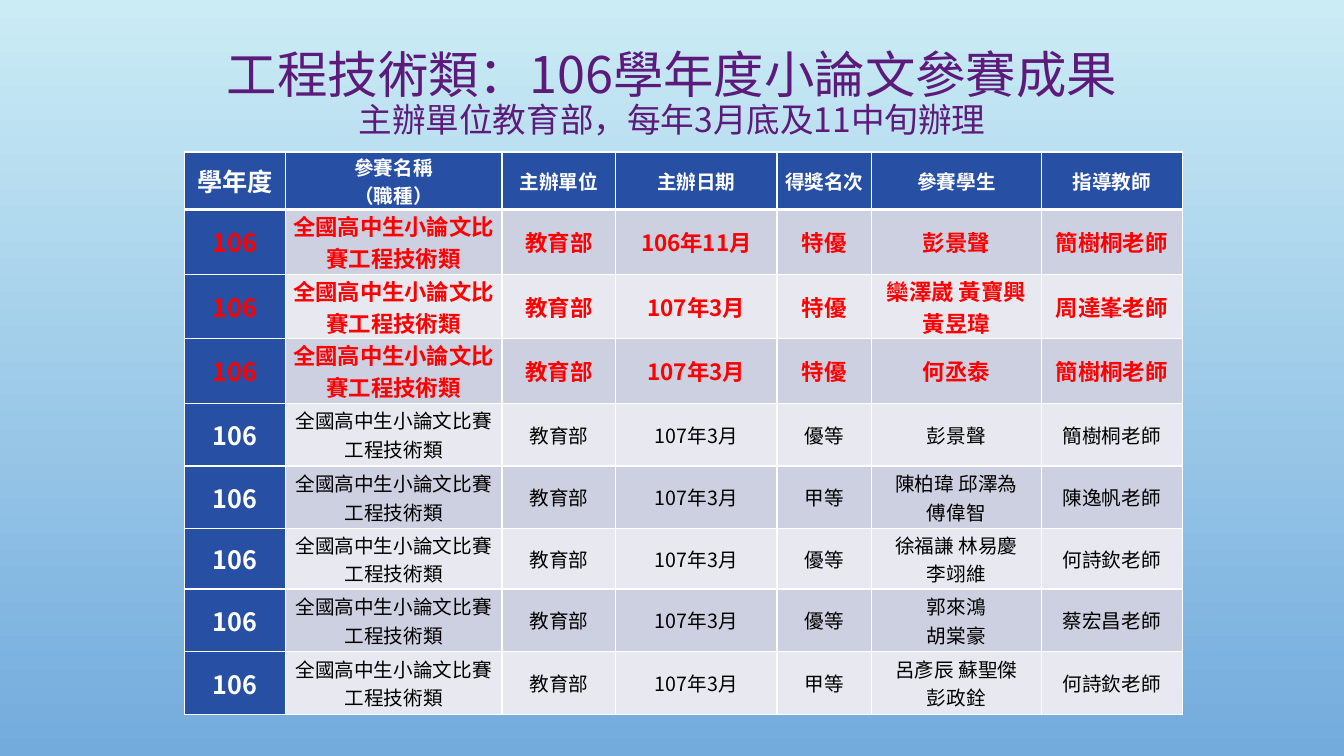
from lxml import etree
from pptx import Presentation
from pptx.dml.color import RGBColor
from pptx.enum import text
from pptx.oxml import ns
from pptx.util import Cm, Pt

FONT = "Noto Sans CJK SC"
BLUE, WHITE, RED, BLACK, PURPLE = "274FA4", "FFFFFF", "FF0000", "000000", "5C1B7B"
BANDS = ["CDD0E0", "E8E9F0"]
HEADERS = ["學年度", "參賽名稱\n（職種）", "主辦單位", "主辦日期", "得獎名次", "參賽學生", "指導教師"]
AWARDS = [
    ("106年11月", "特優", "彭景聲", "簡樹桐老師"),
    ("107年3月", "特優", "欒澤崴 黃寶興\n黃昱瑋", "周達峯老師"),
    ("107年3月", "特優", "何丞泰", "簡樹桐老師"),
    ("107年3月", "優等", "彭景聲", "簡樹桐老師"),
    ("107年3月", "甲等", "陳柏瑋 邱澤為\n傅偉智", "陳逸帆老師"),
    ("107年3月", "優等", "徐福謙 林易慶\n李翊維", "何詩欽老師"),
    ("107年3月", "優等", "郭來鴻\n胡棠豪", "蔡宏昌老師"),
    ("107年3月", "甲等", "呂彥辰 蘇聖傑\n彭政銓", "何詩欽老師"),
]
COLUMN_WIDTHS = [2.54, 5.46, 2.87, 4.06, 2.39, 4.27, 3.56]
ROW_HEIGHTS = [1.45] + [1.58] * 5 + [1.52] + [1.58] * 2


def add_span(para, words, size, color, bold=False):
    span = para.add_run()
    span.text = words
    span.font.size = Pt(size)
    span.font.bold = bold
    span.font.color.rgb = RGBColor.from_string(color)
    span.font.name = FONT
    etree.SubElement(span.font._element, ns.qn("a:ea"), typeface=FONT)


def add_borders(cell, top, bottom):
    """Give the cell white borders; top and bottom are widths in points."""
    widths = {"L": 1, "R": 1, "T": top, "B": bottom}
    for place, (side, width) in enumerate(widths.items()):
        line = etree.Element(ns.qn("a:ln" + side), w=str(Pt(width)))
        fill = etree.SubElement(line, ns.qn("a:solidFill"))
        etree.SubElement(fill, ns.qn("a:srgbClr"), val=WHITE)
        cell._tc.get_or_add_tcPr().insert(place, line)


deck = Presentation()
deck.slide_width, deck.slide_height = Cm(33.87), Cm(19.05)
page = deck.slides.add_slide(deck.slide_layouts[5])

backdrop = page.background.fill
backdrop.gradient()
backdrop.gradient_angle = 270
for stop, color in zip(backdrop.gradient_stops, ["CBECF5", "73ABDD"]):
    stop.color.rgb = RGBColor.from_string(color)

title = page.shapes.title
title.left, title.top, title.width, title.height = Cm(2.54), Cm(0.97), Cm(28.79), Cm(2.84)
title.text_frame.auto_size = text.MSO_AUTO_SIZE.NONE
title.text_frame.word_wrap = True
title.text_frame.vertical_anchor = text.MSO_ANCHOR.MIDDLE
para = title.text_frame.paragraphs[0]
para.alignment = text.PP_ALIGN.CENTER
para.line_spacing = 0.9
add_span(para, "工程技術類：106學年度小論文參賽成果", 36, PURPLE)
para.add_line_break()
etree.SubElement(para._p[-1], ns.qn("a:rPr"), sz="3600")
add_span(para, "主辦單位教育部，每年3月底及11中旬辦理", 24, PURPLE)

rows = [HEADERS]
for number, award in enumerate(AWARDS):
    contest = "全國高中生小論文比賽" + ("" if number < 3 else "\n") + "工程技術類"
    rows.append(["106", contest, "教育部", *award])

table = page.shapes.add_table(
    len(rows), len(HEADERS), Cm(4.65), Cm(3.83), Cm(sum(COLUMN_WIDTHS)), Cm(sum(ROW_HEIGHTS))
).table
for column, width in zip(table.columns, COLUMN_WIDTHS):
    column.width = Cm(width)
for row, height in zip(table.rows, ROW_HEIGHTS):
    row.height = Cm(height)

for r, row in enumerate(rows):
    is_header, is_top_award = r == 0, 1 <= r <= 3
    for c, words in enumerate(row):
        is_label = is_header or c == 0
        color = RED if is_top_award else WHITE if is_label else BLACK
        size = 18 if c == 0 else 16 if is_top_award else 14
        cell = table.cell(r, c)
        cell.fill.solid()
        cell.fill.fore_color.rgb = RGBColor.from_string(BLUE if is_label else BANDS[(r - 1) % 2])
        add_borders(cell, 3 if r == 1 else 1, 3 if is_header else 1)
        cell.margin_left = cell.margin_right = Cm(0.13)
        cell.margin_top = cell.margin_bottom = Cm(0)
        cell.vertical_anchor = text.MSO_ANCHOR.MIDDLE
        for i, line in enumerate(words.split("\n")):
            para = cell.text_frame.add_paragraph() if i else cell.text_frame.paragraphs[0]
            para.alignment = text.PP_ALIGN.CENTER
            add_span(para, line, size, color, is_label or is_top_award)

deck.save("out.pptx")
